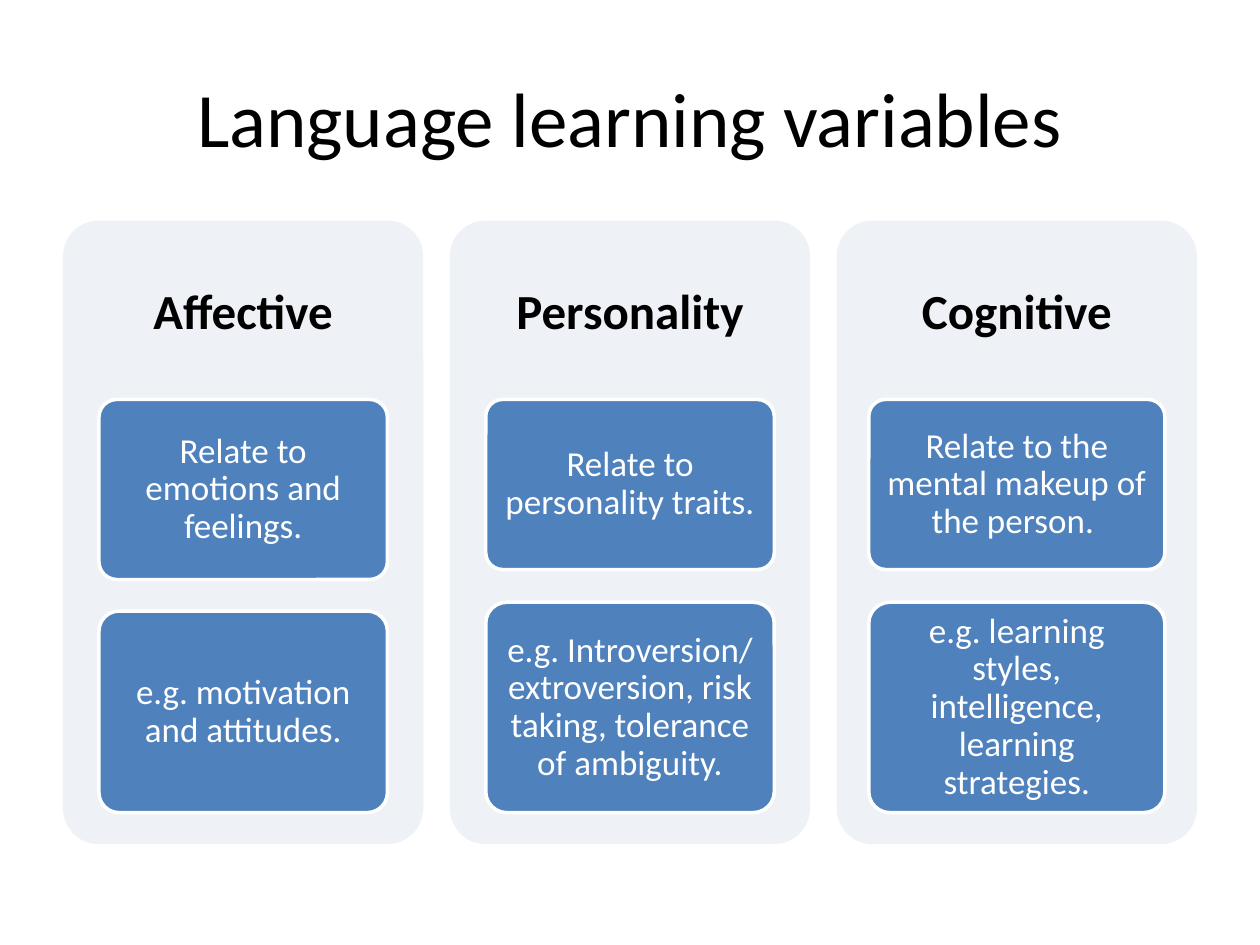
from pptx import Presentation
from pptx.dml.color import RGBColor
from pptx.enum import shapes, text
from pptx.util import Inches, Pt

BLACK = RGBColor(0x00, 0x00, 0x00)
WHITE = RGBColor(0xFF, 0xFF, 0xFF)
PALE = RGBColor(0xEE, 0xF1, 0xF6)
BLUE = RGBColor(0x4F, 0x81, 0xBD)

PANEL_W, PANEL_STEP, PANEL_TOP = 2.86, 3.07, 1.75
BOX_TOP, BOX_BOTTOM = 3.17, 6.45

# heading, box width, first box height, gap between boxes, box texts
COLUMNS = [
    ("Affective", 2.29, 1.43, 0.25,
     ["Relate to emotions and feelings.", "e.g. motivation and attitudes."]),
    ("Personality", 2.29, 1.35, 0.26,
     ["Relate to personality traits.",
      "e.g. Introversion/ extroversion, risk taking, tolerance of ambiguity."]),
    ("Cognitive", 2.35, 1.35, 0.26,
     ["Relate to the mental makeup of the person. ",
      "e.g. learning styles, intelligence, learning strategies."]),
]


def write(sp, words, size, color, inset_x, inset_y, bold=False, spacing=0.9):
    tf = sp.text_frame
    frame = {"word_wrap": True, "vertical_anchor": text.MSO_ANCHOR.MIDDLE,
             "margin_left": Inches(inset_x), "margin_right": Inches(inset_x),
             "margin_top": Inches(inset_y), "margin_bottom": Inches(inset_y)}
    for name, value in frame.items():
        setattr(tf, name, value)
    p = tf.paragraphs[0]
    p.alignment = text.PP_ALIGN.CENTER
    p.line_spacing = spacing
    r = p.add_run()
    r.text = words
    for name, value in {"name": "Calibri", "size": Pt(size), "bold": bold}.items():
        setattr(r.font, name, value)
    r.font.color.rgb = color


def rounded(left, top, width, height, fill):
    sp = s.shapes.add_shape(shapes.MSO_SHAPE.ROUNDED_RECTANGLE, Inches(left),
                            Inches(top), Inches(width), Inches(height))
    sp.adjustments[0] = 0.1
    sp.shadow.inherit = False
    sp.fill.solid()
    sp.fill.fore_color.rgb = fill
    sp.line.fill.background()
    return sp


prs = Presentation()
prs.slide_width, prs.slide_height = Inches(10), Inches(7.5)
s = prs.slides.add_slide(prs.slide_layouts[6])

title = s.shapes.add_textbox(Inches(0.5), Inches(0.3), Inches(9), Inches(1.25))
write(title, "Language learning variables", 44, BLACK, 0.1, 0.05, spacing=1.0)

for i, (heading, box_w, first_h, gap, notes) in enumerate(COLUMNS):
    left = 0.5 + i * PANEL_STEP
    rounded(left, PANEL_TOP, PANEL_W, 4.95, PALE)
    label = s.shapes.add_textbox(Inches(left), Inches(PANEL_TOP),
                                 Inches(PANEL_W), Inches(1.48))
    write(label, heading, 28, BLACK, 0.12, 0.12, bold=True)

    second_top = BOX_TOP + first_h + gap
    spans = [(BOX_TOP, first_h), (second_top, BOX_BOTTOM - second_top)]
    for (top, height), words in zip(spans, notes):
        box = rounded(left + (PANEL_W - box_w) / 2, top, box_w, height, BLUE)
        box.line.color.rgb = WHITE
        box.line.width = Pt(2)
        write(box, words, 20, WHITE, 0.06, 0.04)

prs.save("out.pptx")
